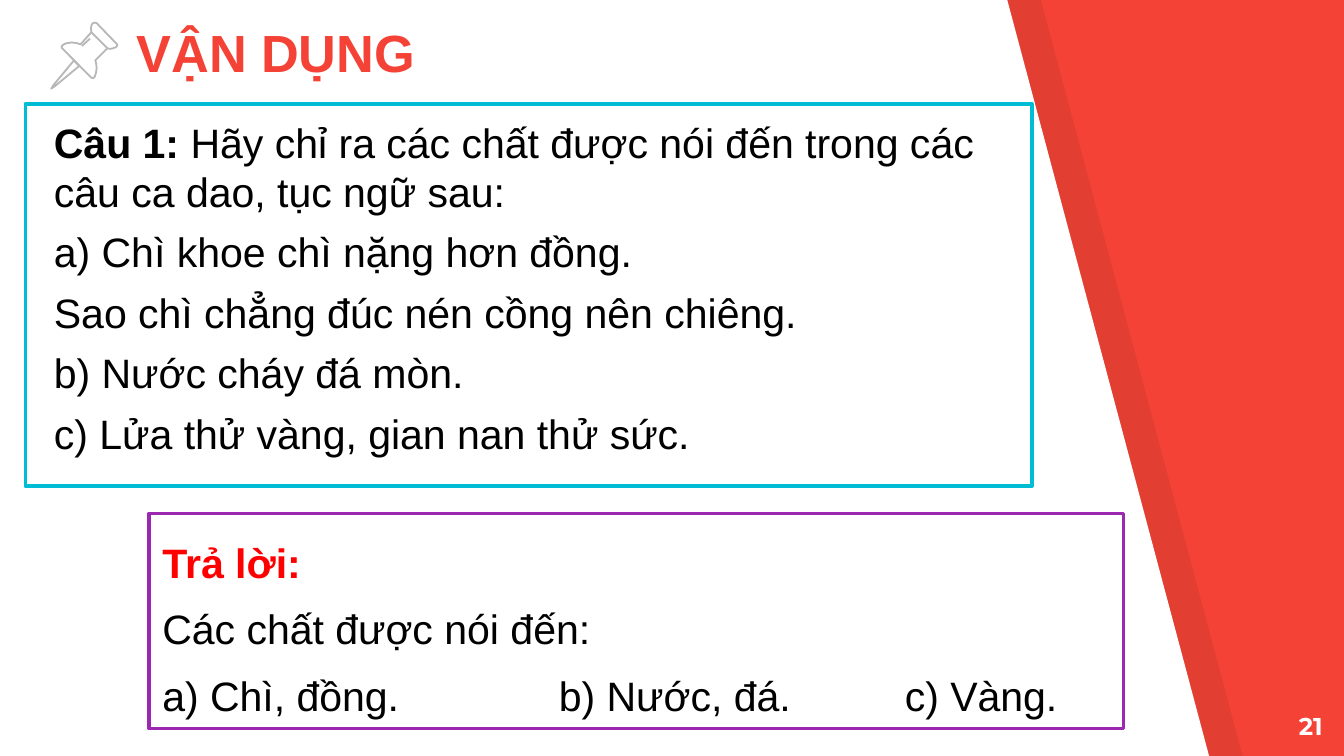
import pptx
import pptx.util
import pptx.dml.color
import pptx.enum.shapes
import pptx.enum.text
import pptx.oxml.ns
from lxml import etree

Pt = pptx.util.Pt
ANCHOR = pptx.enum.text.MSO_ANCHOR
ALIGN = pptx.enum.text.PP_ALIGN

RED = "F44336"
WHITE = "FFFFFF"
BLACK = "000000"
GREY = "B7B7B7"

PIN_NEEDLE = [(39.6, 32.4), (28.8, 45.4), (27.4, 47.5), (29.5, 46.1), (42.5, 35.3)]
PIN_CAP = [(49, 17.3), (57.6, 25.9), (59, 26.2), (60.5, 25.9), (62.3, 25.2),
           (62.9, 24.2), (62.6, 23.6), (51.8, 12.4), (50.8, 12.1), (49.6, 12.5),
           (49, 13.6), (48.7, 15.4)]
PIN_BODY = [(49, 17.3), (43.2, 23.8), (41, 23.1), (38.2, 22.8), (35.3, 23.3),
            (33.5, 24.3), (33, 25.2), (33.3, 25.9), (48.9, 41.6), (49.8, 41.9),
            (50.6, 41.5), (51.4, 39.3), (51.8, 36.8), (51.6, 34.2), (51.1, 32.4),
            (57.6, 25.9)]
PIN_GLINT = [(43.9, 24.7), (48.2, 20.7)]


def rgb(hex_code):
    return pptx.dml.color.RGBColor.from_string(hex_code)


def paint(shape, fill=None, line=None, line_width=1, opacity=None):
    """Set fill and outline; opacity is a percentage of the fill."""
    shape.shadow.inherit = False
    if fill:
        shape.fill.solid()
        shape.fill.fore_color.rgb = rgb(fill)
    else:
        shape.fill.background()
    if opacity is not None:
        colour = shape.fill._xPr.find(".//" + pptx.oxml.ns.qn("a:srgbClr"))
        etree.SubElement(colour, pptx.oxml.ns.qn("a:alpha"), val=str(opacity * 1000))
    if line:
        shape.line.color.rgb = rgb(line)
        shape.line.width = Pt(line_width)
    else:
        shape.line.fill.background()


def add_outline(slide, points, closed=True, **look):
    """Draw a polygon or open line through points given in Pt."""
    units = [(x * 100, y * 100) for x, y in points]
    builder = slide.shapes.build_freeform(*units[0], scale=Pt(0.01))
    builder.add_line_segments(units[1:], close=closed)
    paint(builder.convert_to_shape(), **look)


def add_box(slide, left, top, width, height, **look):
    box = slide.shapes.add_shape(pptx.enum.shapes.MSO_SHAPE.RECTANGLE,
                                 Pt(left), Pt(top), Pt(width), Pt(height))
    paint(box, **look)
    return box


def write(shape, paragraphs, size=22, font="Arial", color=BLACK, bold=False,
          align=ALIGN.LEFT, anchor=ANCHOR.TOP, inset=(7.2, 7.2, 7.2, 7.2),
          space_before=0, line_spacing=None):
    """Fill a shape; a paragraph is a list of (text, format overrides)."""
    frame = shape.text_frame
    frame.word_wrap = True
    frame.auto_size = pptx.enum.text.MSO_AUTO_SIZE.NONE
    frame.vertical_anchor = anchor
    (frame.margin_left, frame.margin_top,
     frame.margin_right, frame.margin_bottom) = map(Pt, inset)
    for index, runs in enumerate(paragraphs):
        paragraph = frame.add_paragraph() if index else frame.paragraphs[0]
        paragraph.alignment = align
        paragraph.space_before = Pt(space_before)
        if line_spacing:
            paragraph.line_spacing = line_spacing
        for text, override in runs:
            run = paragraph.add_run()
            run.text = text
            run.font.size = Pt(size)
            run.font.name = font
            run.font.bold = override.get("bold", bold)
            run.font.color.rgb = rgb(override.get("color", color))


def set_tabs(paragraph, positions):
    tabs = etree.SubElement(paragraph._p.get_or_add_pPr(), pptx.oxml.ns.qn("a:tabLst"))
    for position in positions:
        etree.SubElement(tabs, pptx.oxml.ns.qn("a:tab"), pos=str(Pt(position)), algn="l")


def add_background(slide):
    slide.background.fill.solid()
    slide.background.fill.fore_color.rgb = rgb(RED)
    for left, look in ((18, {"fill": BLACK, "opacity": 7}), (0, {"fill": WHITE})):
        add_outline(slide, [(left, -0.5), (left, 406), (left + 648, 406),
                            (left + 539.5, -0.5)], **look)


def add_pin(slide):
    for points, closed in ((PIN_NEEDLE, True), (PIN_CAP, True),
                           (PIN_BODY, False), (PIN_GLINT, False)):
        add_outline(slide, points, closed, line=GREY, line_width=0.96)


def add_title(slide):
    title = slide.shapes.title
    title.left, title.top, title.width, title.height = map(Pt, (66, 13.5, 419, 38))
    write(title, [[("VẬN DỤNG", {})]], size=28, color=RED, bold=True,
          anchor=ANCHOR.BOTTOM)


def add_question(slide):
    question = add_box(slide, 13.7, 55.6, 539, 205, fill=WHITE, line="00BCD4", line_width=2)
    lines = ["a) Chì khoe chì nặng hơn đồng.",
             "Sao chì chẳng đúc nén cồng nên chiêng.",
             "b) Nước cháy đá mòn.",
             "c) Lửa thử vàng, gian nan thử sức."]
    prompt = [("Câu 1: ", {"bold": True}),
              ("Hãy chỉ ra các chất được nói đến trong các câu ca dao, tục ngữ sau:", {})]
    write(question, [prompt] + [[(line, {})] for line in lines],
          inset=(15.2, 7.2, 7.2, 7.2), space_before=6)


def add_answer(slide):
    answer = add_box(slide, 79.9, 275.2, 522, 115.2, fill=WHITE, line="9C27B0", line_width=2)
    write(answer, [[("Trả lời:", {"bold": True, "color": "FF0000"})],
                   [("Các chất được nói đến:", {})],
                   [("a) Chì, đồng.\tb) Nước, đá.\tc) Vàng.", {})]],
          inset=(7.2, 3.6, 7.2, 3.6), line_spacing=1.35)
    set_tabs(answer.text_frame.paragraphs[-1], (212.4, 397.7))


def add_page_number(slide):
    number = slide.shapes.add_textbox(Pt(672.5), Pt(373.7), Pt(43.2), Pt(31))
    write(number, [[("21", {})]], size=13, font="Montserrat", color=WHITE,
          bold=True, align=ALIGN.RIGHT)


def main():
    presentation = pptx.Presentation()
    presentation.slide_width, presentation.slide_height = Pt(720), Pt(405)
    slide = presentation.slides.add_slide(presentation.slide_layouts[5])
    add_background(slide)
    # The title placeholder comes first; lift it above the background panels.
    slide.shapes._spTree.append(slide.shapes.title._element)
    add_title(slide)
    add_pin(slide)
    add_page_number(slide)
    add_question(slide)
    add_answer(slide)
    presentation.save("out.pptx")


if __name__ == "__main__":
    main()
